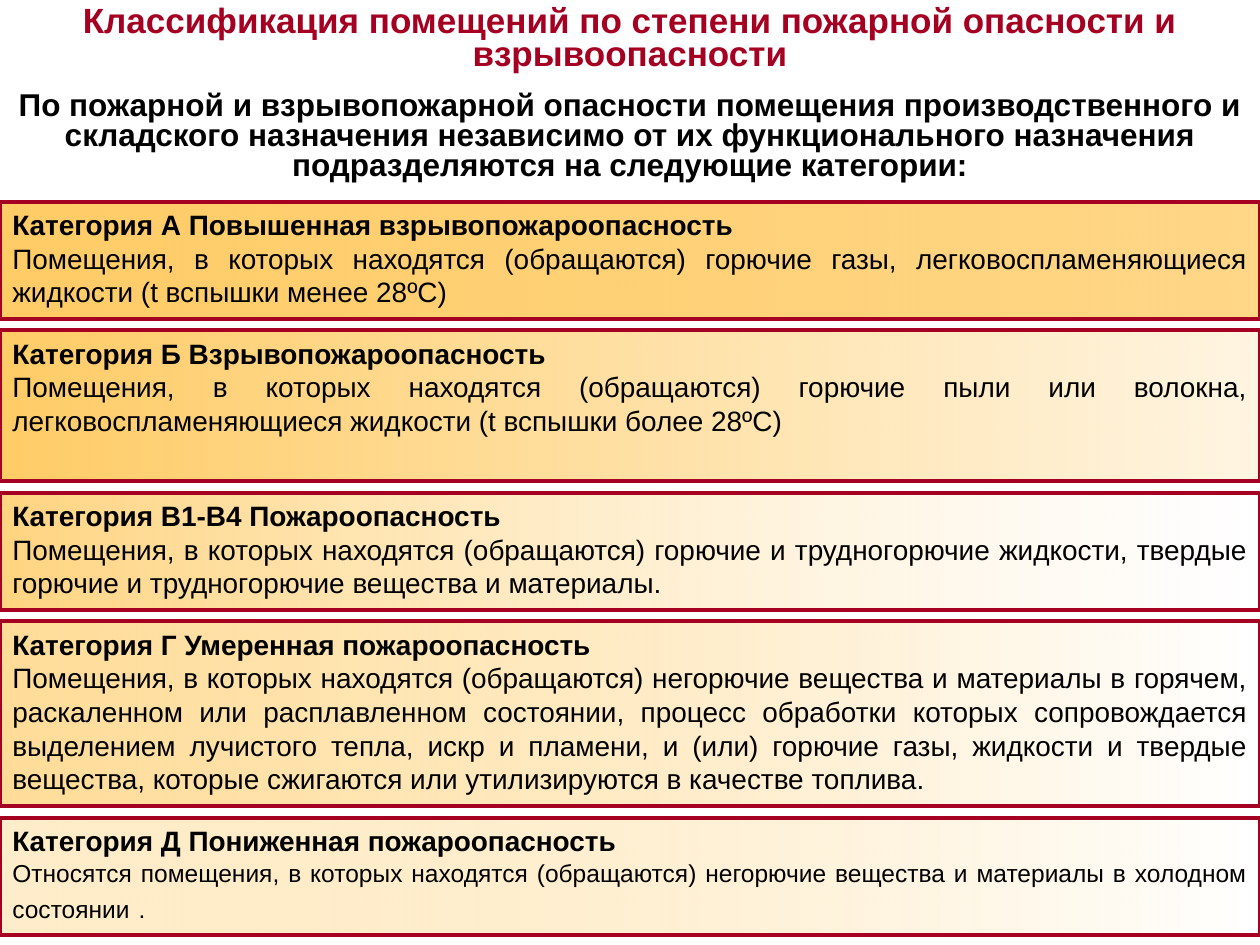
import pptx
import pptx.dml.color
import pptx.enum.shapes
import pptx.enum.text
import pptx.oxml
import pptx.oxml.ns
import pptx.util

RGBColor = pptx.dml.color.RGBColor
Inches = pptx.util.Inches
Pt = pptx.util.Pt
ALIGN = pptx.enum.text.PP_ALIGN

CRIMSON = RGBColor(0xA5, 0x00, 0x21)
BLACK = RGBColor(0x00, 0x00, 0x00)
WHITE = RGBColor(0xFF, 0xFF, 0xFF)
AMBER = RGBColor(0xFF, 0xCC, 0x66)
LIGHT_AMBER = RGBColor(0xFF, 0xD5, 0x81)

WIDTH, HEIGHT = 10, 7.5
FIRST_BAND_TOP = 1.6
BAND_GAP = 0.09

TITLE = "Классификация помещений по степени пожарной опасности и взрывоопасности"
INTRO = ("По пожарной и взрывопожарной опасности помещения производственного и "
         "складского назначения независимо от их функционального назначения "
         "подразделяются на следующие категории:")

# Height, gradient stops as (colour, opacity in percent), heading, text runs as (text, size)
CATEGORIES = [
    (0.93, [(AMBER, 100), (AMBER, 78)],
     "Категория А Повышенная взрывопожароопасность",
     [("Помещения, в которых находятся (обращаются) горючие газы, "
       "легковоспламеняющиеся жидкости (t вспышки менее 28ºС)", 16)]),
    (1.2, [(AMBER, 100), (AMBER, 19)],
     "Категория Б Взрывопожароопасность",
     [("Помещения, в которых находятся (обращаются) горючие пыли или волокна, "
       "легковоспламеняющиеся жидкости (t вспышки более 28ºС)", 16)]),
    (0.93, [(LIGHT_AMBER, 100), (WHITE, 51)],
     "Категория В1-В4 Пожароопасность",
     [("Помещения, в которых находятся (обращаются) горючие и трудногорючие жидкости, "
       "твердые горючие и трудногорючие вещества и материалы.", 16)]),
    (1.47, [(LIGHT_AMBER, 81), (WHITE, 100)],
     "Категория Г Умеренная пожароопасность",
     [("Помещения, в которых находятся (обращаются) негорючие вещества и материалы "
       "в горячем, раскаленном или расплавленном состоянии, процесс обработки которых "
       "сопровождается выделением лучистого тепла, искр и пламени, и (или) горючие газы, "
       "жидкости и твердые вещества, которые сжигаются или утилизируются "
       "в качестве топлива.", 16)]),
    (0.93, [(LIGHT_AMBER, 41), (WHITE, 100)],
     "Категория Д Пониженная пожароопасность",
     [("Относятся помещения, в которых находятся (обращаются) негорючие вещества "
       "и материалы в холодном состоянии", 14), (" ", 18), (".", 14)]),
]


def place(shape, top, height):
    shape.left, shape.top = 0, Inches(top)
    shape.width, shape.height = Inches(WIDTH), Inches(height)


def prepare_frame(shape):
    frame = shape.text_frame
    frame.word_wrap = True
    frame.auto_size = pptx.enum.text.MSO_AUTO_SIZE.NONE
    frame.vertical_anchor = pptx.enum.text.MSO_ANCHOR.TOP
    return frame


def set_font(font, size, color=BLACK, bold=False):
    font.name = "Arial"
    font.size = Pt(size)
    font.bold = bold
    font.color.rgb = color


def fill_placeholder(placeholder, text, top, height, size, color):
    place(placeholder, top, height)
    frame = prepare_frame(placeholder)
    frame.text = text
    paragraph = frame.paragraphs[0]
    properties = paragraph._p.get_or_add_pPr()
    properties.set("marL", "0")
    properties.set("indent", "0")
    properties.append(pptx.oxml.parse_xml(
        f'<a:buNone {pptx.oxml.ns.nsdecls("a")}/>'))
    paragraph.alignment = ALIGN.CENTER
    paragraph.line_spacing = 0.8
    paragraph.space_before = Pt(0)
    set_font(paragraph.font, size, color, bold=True)


def set_gradient(shape, stops):
    """Fill from left to right with (colour, opacity) stops."""
    shape.fill.gradient()
    shape.fill.gradient_angle = 0
    for stop, (color, _) in zip(shape.fill.gradient_stops, stops):
        stop.color.rgb = color
    color_elements = shape._element.spPr.iter(pptx.oxml.ns.qn("a:srgbClr"))
    for element, (_, opacity) in zip(list(color_elements), stops):
        if opacity < 100:
            element.append(pptx.oxml.parse_xml(
                f'<a:alpha {pptx.oxml.ns.nsdecls("a")} val="{opacity * 1000}"/>'))


def add_category(slide, top, height, stops, heading, runs):
    band = slide.shapes.add_shape(
        pptx.enum.shapes.MSO_SHAPE.RECTANGLE, 0, Inches(top), Inches(WIDTH), Inches(height))
    band.shadow.inherit = False
    set_gradient(band, stops)
    band.line.color.rgb = CRIMSON
    band.line.width = Pt(2.25)

    frame = prepare_frame(band)
    title = frame.paragraphs[0]
    title.text = heading
    title.alignment = ALIGN.JUSTIFY
    set_font(title.font, 16, bold=True)
    description = frame.add_paragraph()
    description.alignment = ALIGN.JUSTIFY
    for text, size in runs:
        run = description.add_run()
        run.text = text
        set_font(run.font, size)


def main():
    presentation = pptx.Presentation()
    presentation.slide_width = Inches(WIDTH)
    presentation.slide_height = Inches(HEIGHT)
    slide = presentation.slides.add_slide(presentation.slide_layouts[1])
    fill_placeholder(slide.shapes.title, TITLE, 0, 0.48, 20, CRIMSON)
    fill_placeholder(slide.placeholders[1], INTRO, 0.68, 0.82, 18, BLACK)

    top = FIRST_BAND_TOP
    for height, stops, heading, runs in CATEGORIES:
        add_category(slide, top, height, stops, heading, runs)
        top += height + BAND_GAP
    presentation.save("out.pptx")


if __name__ == "__main__":
    main()
